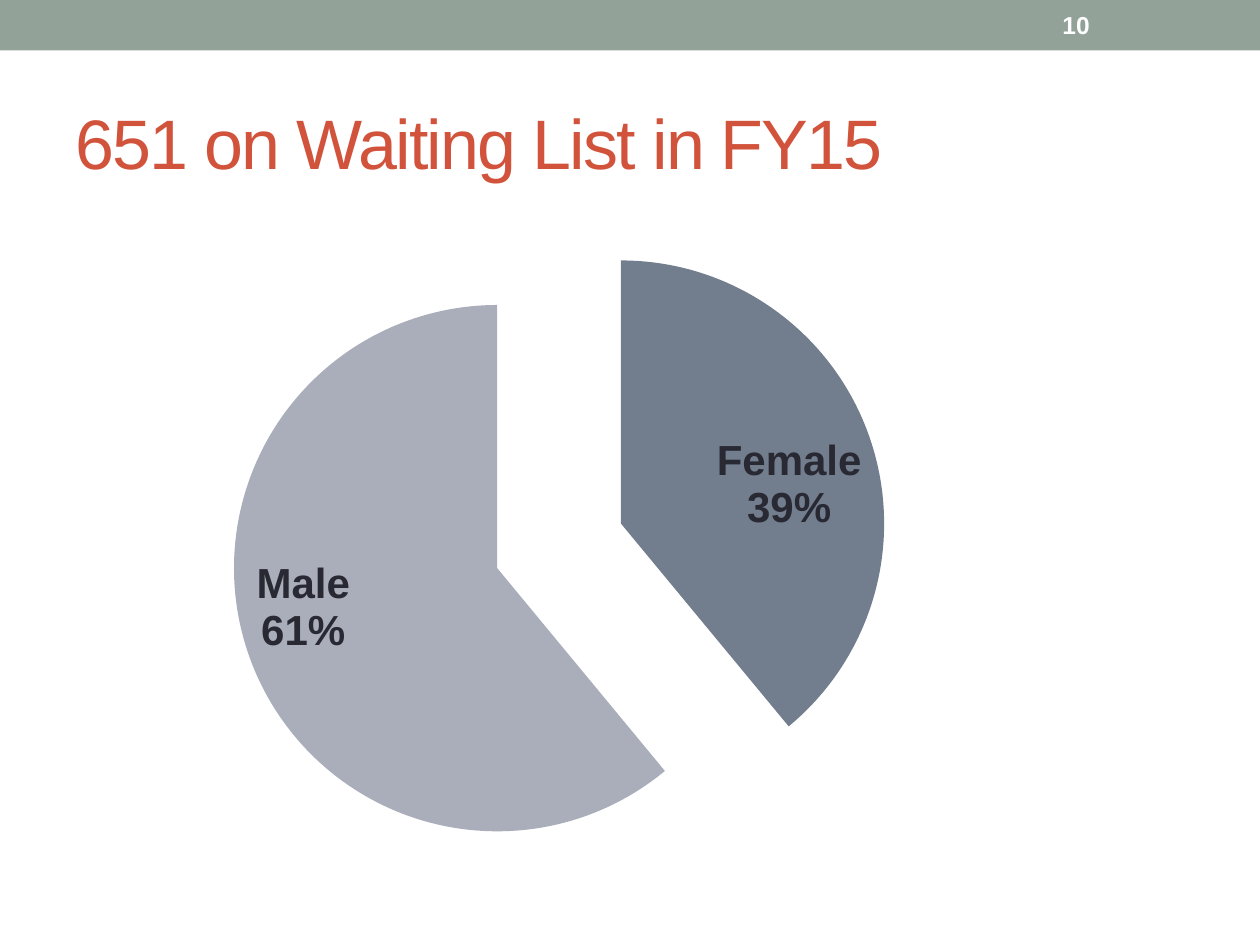
from lxml.etree import SubElement
from pptx import Presentation
from pptx.chart.data import CategoryChartData
from pptx.dml.color import RGBColor
from pptx.enum.chart import XL_CHART_TYPE as ChartType, XL_LABEL_POSITION as LabelPosition
from pptx.enum.shapes import MSO_SHAPE as ShapeType
from pptx.enum.text import MSO_ANCHOR as Anchor, PP_ALIGN as Align
from pptx.oxml.ns import qn
from pptx.util import Pt

TITLE = "651 on Waiting List in FY15"
PAGE_NUMBER = "10"
WAITING_LIST = [("Female", 39, "727E8E"), ("Male", 61, "A9AEBA")]
EXPLOSION = 25

THEME = {
    "font": "Arial",
    "band": "93A299",
    "title": "D2533C",
    "number": "FFFFFF",
    "label": "292934",
    "title_size": 40,
    "number_size": 14,
    "label_size": 24,
}
SLIDE_SIZE = (720, 540)
BAND_BOX = (0, 0, 720, 28.8)
TITLE_BOX = (36, 41.76, 648, 77.76)
NUMBER_BOX = (600, 1.44, 84, 25.92)
CHART_BOX = (54, 90, 630, 432)
PLOT_BOX = (131.5, 124, 376, 376)


def points(box):
    return [Pt(length) for length in box]


def style_font(font, role, bold=False):
    font.name = THEME["font"]
    font.size = Pt(THEME[f"{role}_size"])
    font.bold = bold
    font.color.rgb = RGBColor.from_string(THEME[role])


def add_text(slide, box, text, role, align, bold=False):
    frame = slide.shapes.add_textbox(*points(box)).text_frame
    frame.word_wrap = True
    frame.vertical_anchor = Anchor.MIDDLE
    paragraph = frame.paragraphs[0]
    paragraph.alignment = align
    run = paragraph.add_run()
    run.text = text
    style_font(run.font, role, bold)
    return run


def place_plot(chart):
    plot_area = chart.plots[0]._element.getparent()
    for layout in plot_area.findall(qn("c:layout")):
        plot_area.remove(layout)
    layout = SubElement(plot_area, qn("c:layout"))
    plot_area.insert(0, layout)
    manual = SubElement(layout, qn("c:manualLayout"))
    left, top, width, height = PLOT_BOX
    chart_left, chart_top, chart_width, chart_height = CHART_BOX
    settings = {
        "layoutTarget": "inner",
        "xMode": "edge",
        "yMode": "edge",
        "x": (left - chart_left) / chart_width,
        "y": (top - chart_top) / chart_height,
        "w": width / chart_width,
        "h": height / chart_height,
    }
    for name, value in settings.items():
        SubElement(manual, qn(f"c:{name}")).set("val", str(value))


def add_pie(slide):
    data = CategoryChartData()
    data.categories = [name for name, value, color in WAITING_LIST]
    data.add_series("Series 1", [value for name, value, color in WAITING_LIST])
    chart = slide.shapes.add_chart(ChartType.PIE, *points(CHART_BOX), data).chart
    chart.has_title = False
    chart.has_legend = False
    style_font(chart.font, "label")
    plot = chart.plots[0]
    plot.vary_by_categories = True
    series = plot.series[0]
    for index, (name, value, color) in enumerate(WAITING_LIST):
        fill = series.points[index].format.fill
        fill.solid()
        fill.fore_color.rgb = RGBColor.from_string(color)
    explosion = SubElement(series._element, qn("c:explosion"))
    explosion.set("val", str(EXPLOSION))
    series._element.find(qn("c:dPt")).addprevious(explosion)
    labels = series.data_labels
    labels.show_value = False
    labels.show_category_name = True
    labels.show_percentage = True
    labels.position = LabelPosition.INSIDE_END
    style_font(labels.font, "label", bold=True)
    separator = SubElement(labels._element, qn("c:separator"))
    separator.text = "\n"
    labels._element.find(qn("c:showBubbleSize")).addnext(separator)
    place_plot(chart)


def main():
    presentation = Presentation()
    presentation.slide_width, presentation.slide_height = points(SLIDE_SIZE)
    slide = presentation.slides.add_slide(presentation.slide_layouts[6])
    band = slide.shapes.add_shape(ShapeType.RECTANGLE, *points(BAND_BOX))
    band.shadow.inherit = False
    band.fill.solid()
    band.fill.fore_color.rgb = RGBColor.from_string(THEME["band"])
    band.line.fill.background()
    title = add_text(slide, TITLE_BOX, TITLE, "title", Align.LEFT)
    title.font._element.set("spc", "-100")
    add_text(slide, NUMBER_BOX, PAGE_NUMBER, "number", Align.LEFT, bold=True)
    add_pie(slide)
    presentation.save("out.pptx")


if __name__ == "__main__":
    main()
